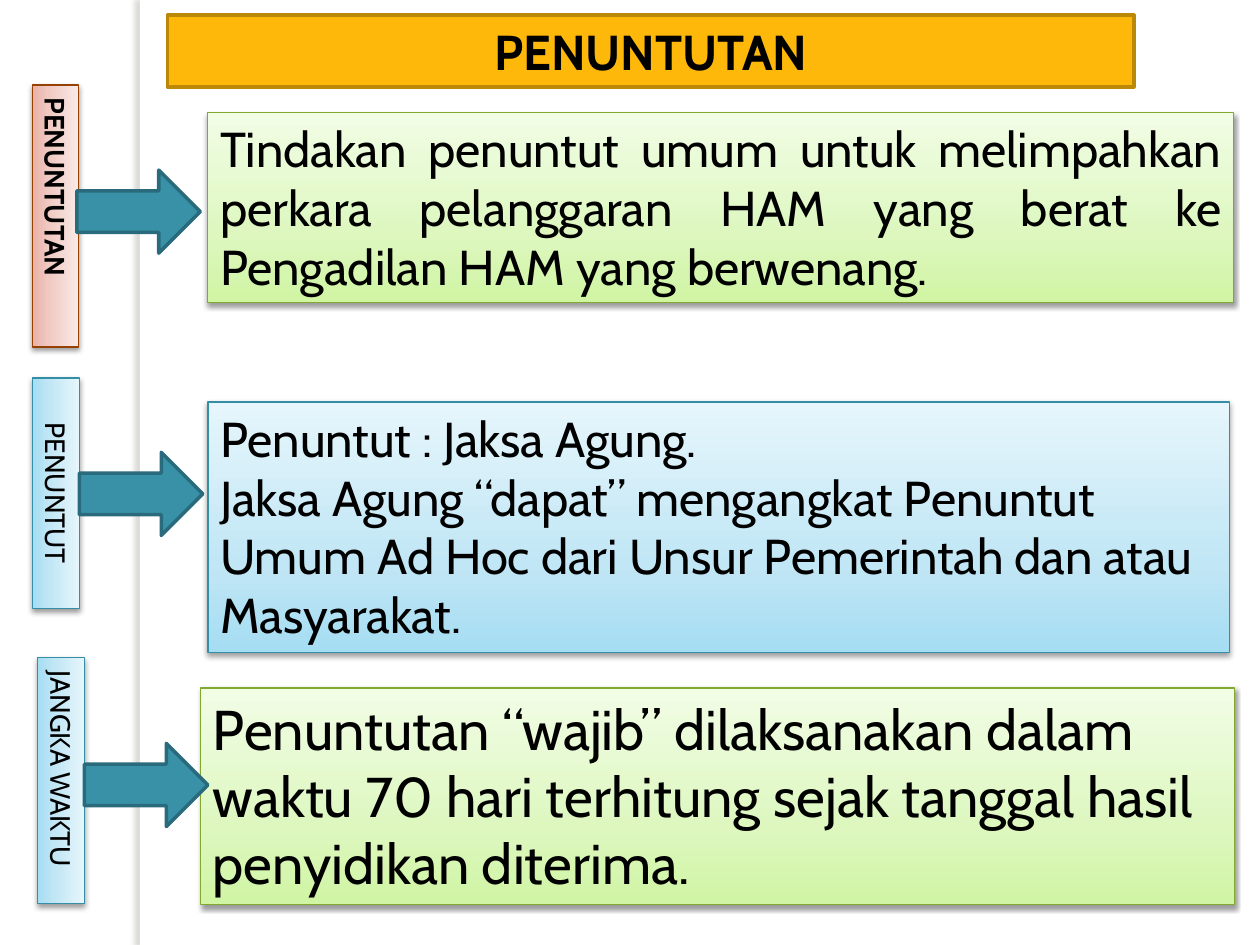
from copy import deepcopy
from dataclasses import dataclass
from typing import Optional

from lxml.etree import SubElement
from pptx import Presentation
from pptx.dml.color import RGBColor
from pptx.enum.shapes import MSO_SHAPE
from pptx.enum.text import MSO_ANCHOR, MSO_AUTO_SIZE, PP_ALIGN
from pptx.oxml.ns import qn
from pptx.util import Inches, Pt


@dataclass(frozen=True)
class Shadow:
    color: str
    opacity: int
    blur: float
    distance: float
    angle: int


@dataclass(frozen=True)
class Finish:
    fills: tuple[str, ...]
    line: Optional[str] = None
    line_width: float = 0.75
    shadow: Optional[Shadow] = None


@dataclass(frozen=True)
class Theme:
    font: str = "Cabin"
    ink: str = "000000"
    label_size: int = 16
    body_size: int = 28
    large_size: int = 32
    gradient_positions: tuple[float, ...] = (0, 0.35, 1)
    drop: Shadow = Shadow("000000", 38, 3.1, 1.6, 90)
    strip: Finish = Finish(("FFFFFF",), shadow=Shadow("736F63", 25, 3, 3, 180))
    title: Finish = Finish(("FEB80A",), "BC8807", 2)
    arrow: Finish = Finish(("3891A7",), "296B7C", 2)
    red: Finish = Finish(("EAB1A6", "EFC9C2", "FAEAE7"), "964101", shadow=drop)
    blue: Finish = Finish(("A5DDF3", "C1E6F5", "E6F6FC"), "348FA6", shadow=drop)
    green: Finish = Finish(("D0F5A3", "DDF7BF", "F2FDE6"), "82A92F", shadow=drop)


THEME = Theme()


@dataclass(frozen=True)
class Box:
    left: float
    top: float
    width: float
    height: float
    finish: Finish
    lines: tuple[str, ...] = ()
    size: int = THEME.body_size
    align: PP_ALIGN = PP_ALIGN.LEFT
    bold: bool = False
    rotation: int = 0
    kind: MSO_SHAPE = MSO_SHAPE.RECTANGLE


def set_values(target, values: dict) -> None:
    for name, value in values.items():
        setattr(target, name, value)


def paint_fill(shape, colors: tuple[str, ...]) -> None:
    if len(colors) == 1:
        shape.fill.solid()
        shape.fill.fore_color.rgb = RGBColor.from_string(colors[0])
        return
    shape.fill.gradient()
    shape.fill.gradient_angle = 90  # first colour at the bottom
    stop_list = shape._element.spPr.find(".//" + qn("a:gsLst"))
    stop_list.append(deepcopy(stop_list[-1]))  # a new gradient has two stops
    stops = shape.fill.gradient_stops
    for stop, color, position in zip(stops, colors, THEME.gradient_positions):
        stop.color.rgb = RGBColor.from_string(color)
        stop.position = position


def paint_shadow(shape, shadow: Optional[Shadow]) -> None:
    shape.shadow.inherit = False
    if shadow is None:
        return
    effects = shape._element.spPr.find(qn("a:effectLst"))
    outer = SubElement(effects, qn("a:outerShdw"), {
        "blurRad": str(Pt(shadow.blur)),
        "dist": str(Pt(shadow.distance)),
        "dir": str(shadow.angle * 60000),
        "rotWithShape": "0",
    })
    color = SubElement(outer, qn("a:srgbClr"), val=shadow.color)
    SubElement(color, qn("a:alpha"), val=str(shadow.opacity * 1000))


def write_text(shape, box: Box) -> None:
    frame = shape.text_frame
    set_values(frame, {
        "text": "\n".join(box.lines),
        "word_wrap": True,
        "auto_size": MSO_AUTO_SIZE.SHAPE_TO_FIT_TEXT,
        "vertical_anchor": MSO_ANCHOR.TOP,
    })
    for paragraph in frame.paragraphs:
        paragraph.alignment = box.align
        for run in paragraph.runs:
            set_values(run.font, {
                "name": THEME.font, "size": Pt(box.size), "bold": box.bold})
            run.font.color.rgb = RGBColor.from_string(THEME.ink)


def draw_box(slide, box: Box) -> None:
    shape = slide.shapes.add_shape(
        box.kind, Inches(box.left), Inches(box.top),
        Inches(box.width), Inches(box.height))
    shape.rotation = box.rotation
    paint_fill(shape, box.finish.fills)
    if box.finish.line:
        shape.line.color.rgb = RGBColor.from_string(box.finish.line)
        shape.line.width = Pt(box.finish.line_width)
    else:
        shape.line.fill.background()
    paint_shadow(shape, box.finish.shadow)
    if box.lines:
        write_text(shape, box)


def side_label(left: float, top: float, length: float, finish: Finish,
               text: str, align: PP_ALIGN, bold: bool = False) -> Box:
    """Label turned a quarter clockwise, its length running down the slide."""
    return Box(left, top, length, 0.37, finish, (text,),
               THEME.label_size, align, bold, rotation=90)


def arrow(left: float, top: float) -> Box:
    return Box(left, top, 0.98, 0.66, THEME.arrow, kind=MSO_SHAPE.RIGHT_ARROW)


BOXES = (
    # Side strip and title
    Box(1.11, 0, 0.08, 7.5, THEME.strip),
    Box(1.33, 0.12, 7.67, 0.57, THEME.title, ("PENUNTUTAN",),
        align=PP_ALIGN.CENTER, bold=True),
    # Side labels
    side_label(-0.6, 1.53, 2.08, THEME.red, "PENUNTUTAN", PP_ALIGN.JUSTIFY, True),
    side_label(-0.47, 3.73, 1.83, THEME.blue, "PENUNTUT", PP_ALIGN.CENTER),
    side_label(-0.49, 6.01, 1.95, THEME.blue, "JANGKA WAKTU", PP_ALIGN.JUSTIFY),
    # Explanations
    Box(1.65, 0.89, 8.14, 1.51, THEME.green, (
        "Tindakan penuntut umum untuk melimpahkan perkara pelanggaran HAM "
        "yang berat ke Pengadilan HAM yang berwenang.",),
        align=PP_ALIGN.JUSTIFY),
    Box(1.65, 3.19, 8.11, 1.99, THEME.blue, (
        "Penuntut : Jaksa Agung.",
        "Jaksa Agung “dapat” mengangkat Penuntut Umum Ad Hoc dari Unsur "
        "Pemerintah dan atau Masyarakat.")),
    Box(1.59, 5.46, 8.21, 1.72, THEME.green, (
        "Penuntutan “wajib” dilaksanakan dalam waktu 70 hari terhitung sejak "
        "tanggal hasil penyidikan diterima.",), THEME.large_size),
    # Arrows from label to explanation
    arrow(0.61, 1.35),
    arrow(0.63, 3.59),
    arrow(0.67, 5.9),
)


def main() -> None:
    presentation = Presentation()
    set_values(presentation, {
        "slide_width": Inches(10), "slide_height": Inches(7.5)})
    slide = presentation.slides.add_slide(presentation.slide_layouts[6])
    for box in BOXES:
        draw_box(slide, box)
    presentation.save("out.pptx")


if __name__ == "__main__":
    main()
